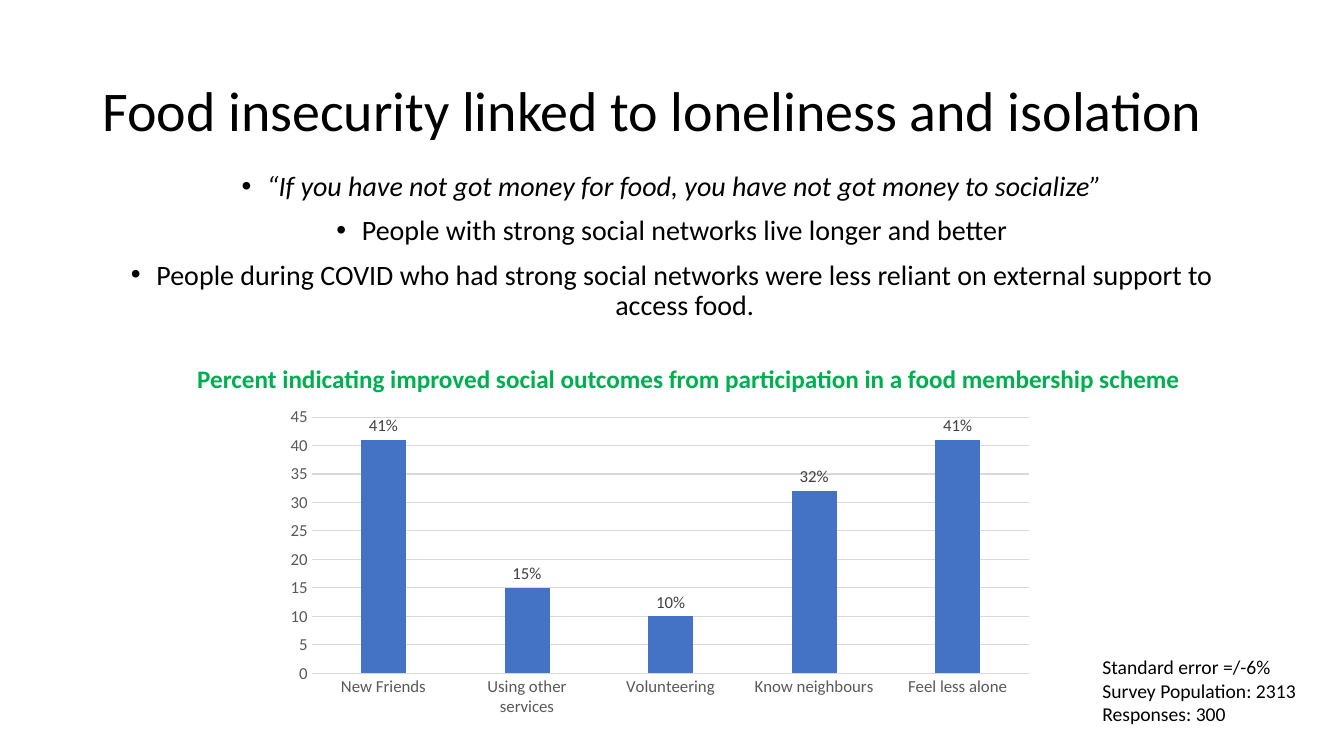
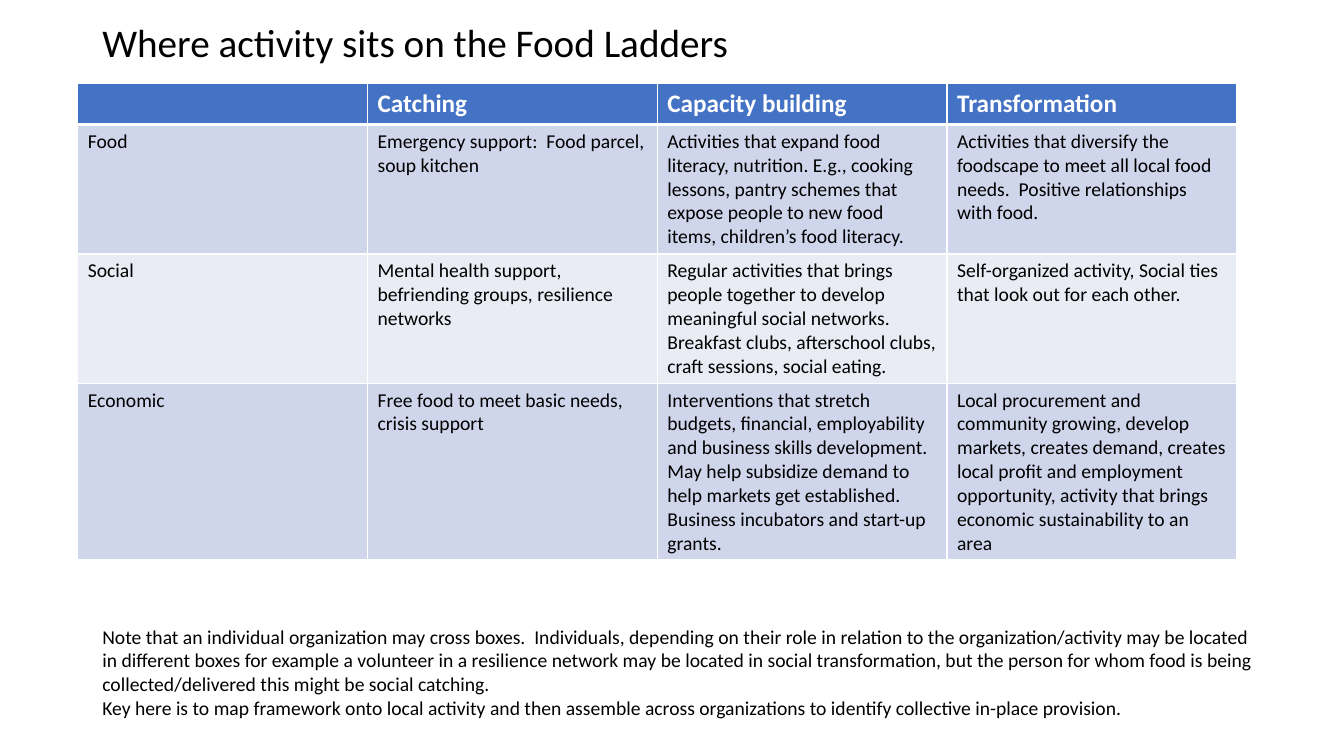
from dataclasses import dataclass

from lxml import etree
from pptx import Presentation
from pptx.chart.data import CategoryChartData
from pptx.dml.color import RGBColor
from pptx.enum.chart import XL_CHART_TYPE, XL_LABEL_POSITION, XL_TICK_MARK
from pptx.enum.text import MSO_ANCHOR, MSO_AUTO_SIZE, PP_ALIGN
from pptx.oxml import parse_xml
from pptx.oxml.ns import nsdecls, qn
from pptx.util import Cm, Pt

COLUMN = XL_CHART_TYPE.COLUMN_CLUSTERED
ABOVE = XL_LABEL_POSITION.OUTSIDE_END
NO_TICK = XL_TICK_MARK.NONE
MIDDLE = MSO_ANCHOR.MIDDLE
CENTER = PP_ALIGN.CENTER
GROW = MSO_AUTO_SIZE.SHAPE_TO_FIT_TEXT


@dataclass(frozen=True)
class Theme:
    font: str = "Calibri"
    ink: str = "000000"
    paper: str = "FFFFFF"
    blue: str = "4472C4"
    green: str = "00B050"
    dark: str = "CFD5EA"
    light: str = "E9EBF5"
    axis: str = "595959"
    label: str = "404040"
    grid: str = "D9D9D9"
    title: int = 40
    small: int = 28
    body: int = 20
    head: int = 18
    note: int = 14
    tick: int = 12
    left: float = 2.33
    width: float = 29.21


T = Theme()

POINTS = [
    "“If you have not got money for food, you have not got money to socialize”",
    "People with strong social networks live longer and better",
    "People during COVID who had strong social networks were less reliant "
    "on external support to access food.",
]
SCORES = {
    "New Friends": 41,
    "Using other services": 15,
    "Volunteering": 10,
    "Know neighbours": 32,
    "Feel less alone": 41,
}
SURVEY = ["Standard error =/-6%", "Survey Population: 2313", "Responses: 300"]
LADDER = [
    ["", "Catching", "Capacity building", "Transformation"],
    ["Food",
     "Emergency support:  Food parcel, soup kitchen",
     "Activities that expand food literacy, nutrition. E.g., cooking lessons, "
     "pantry schemes that expose people to new food items, children’s food "
     "literacy.",
     "Activities that diversify the foodscape to meet all local food needs.  "
     "Positive relationships with food."],
    ["Social",
     "Mental health support, befriending groups, resilience networks",
     "Regular activities that brings people together to develop meaningful "
     "social networks. Breakfast clubs, afterschool clubs, craft sessions, "
     "social eating.",
     "Self-organized activity, Social ties that look out for each other."],
    ["Economic",
     "Free food to meet basic needs, crisis support",
     "Interventions that stretch budgets, financial, employability and "
     "business skills development. May help subsidize demand to help markets "
     "get established.  Business incubators and start-up grants.",
     "Local procurement and community growing, develop markets, creates "
     "demand, creates local profit and employment opportunity, activity that "
     "brings economic sustainability to an area"],
]
HEIGHTS = [1.04, 3.26, 3.26, 4.45]
NOTES = [
    "Note that an individual organization may cross boxes.  Individuals, "
    "depending on their role in relation to the organization/activity may be "
    "located in different boxes for example a volunteer in a resilience "
    "network may be located in social transformation, but the person for whom "
    "food is being collected/delivered this might be social catching.",
    "Key here is to map framework onto local activity and then assemble "
    "across organizations to identify collective in-place provision.",
]


def style(font, size, color=T.ink, bold=False):
    font.name = T.font
    font.size = Pt(size)
    font.bold = bold
    font.color.rgb = RGBColor.from_string(color)


def add_text(slide, box, lines, size, color=T.ink, bold=False, wrap=True):
    frame = slide.shapes.add_textbox(*map(Cm, box)).text_frame
    frame.text = "\n".join(lines)
    frame.word_wrap = wrap
    for para in frame.paragraphs:
        for run in para.runs:
            style(run.font, size, color, bold)
    return frame


def add_title(slide, text, top, height, size):
    frame = add_text(slide, (T.left, top, T.width, height), [text], size)
    frame.vertical_anchor = MIDDLE
    frame.paragraphs[0].line_spacing = 0.9


def add_bullets(slide, box, lines):
    frame = add_text(slide, box, lines, T.body)
    for para in frame.paragraphs:
        para.alignment = CENTER
        para.line_spacing = 0.9
        para.space_before = Pt(10)
        props = para._p.get_or_add_pPr()
        props.set("marL", str(Cm(0.64)))
        props.set("indent", str(Cm(-0.64)))
        etree.SubElement(props, qn("a:buFont")).set("typeface", "Arial")
        etree.SubElement(props, qn("a:buChar")).set("char", "•")
    return frame


def set_line(line):
    line.color.rgb = RGBColor.from_string(T.grid)
    line.width = Pt(0.75)


def set_plot(chart, x, y, w, h):
    """Fix the inner plot area as shares of the chart."""
    area = chart._chartSpace.chart.plotArea
    for old in area.findall(qn("c:layout")):
        area.remove(old)
    area.insert(0, parse_xml(
        f'<c:layout {nsdecls("c")}><c:manualLayout>'
        '<c:layoutTarget val="inner"/>'
        '<c:xMode val="edge"/><c:yMode val="edge"/>'
        f'<c:x val="{x}"/><c:y val="{y}"/><c:w val="{w}"/><c:h val="{h}"/>'
        '</c:manualLayout></c:layout>'))


def add_columns(slide, box, scores):
    data = CategoryChartData()
    data.categories = list(scores)
    data.add_series("Series 1", list(scores.values()))
    chart = slide.shapes.add_chart(COLUMN, *map(Cm, box), data).chart
    chart.has_legend = False
    chart.has_title = False
    style(chart.font, T.tick)
    set_plot(chart, 0.07, 0.03, 0.92, 0.79)

    # Axes
    cats, vals = chart.category_axis, chart.value_axis
    for axis in (cats, vals):
        axis.major_tick_mark = axis.minor_tick_mark = NO_TICK
        style(axis.tick_labels.font, T.tick, T.axis)
    set_line(cats.format.line)
    vals.format.line.fill.background()
    vals.minimum_scale, vals.maximum_scale, vals.major_unit = 0, 45, 5
    set_line(vals.major_gridlines.format.line)

    # Bars and their labels
    plot = chart.plots[0]
    plot.gap_width, plot.overlap = 219, -27
    plot.vary_by_categories = False
    fill = plot.series[0].format.fill
    fill.solid()
    fill.fore_color.rgb = RGBColor.from_string(T.blue)
    labels = plot.series[0].data_labels
    labels.show_value = True
    labels.position = ABOVE
    labels.number_format = '0"%"'
    labels.number_format_is_linked = False
    style(labels.font, T.tick, T.label)


def set_edges(cell, widths):
    props = cell._tc.get_or_add_tcPr()
    for side, width in zip("LRTB", widths):
        props.append(parse_xml(
            f'<a:ln{side} {nsdecls("a")} w="{Pt(width)}"><a:solidFill>'
            f'<a:srgbClr val="{T.paper}"/></a:solidFill></a:ln{side}>'))


def set_cell(cell, text, size, color, fill, bold, widths):
    set_edges(cell, widths)
    cell.fill.solid()
    cell.fill.fore_color.rgb = RGBColor.from_string(fill)
    cell.text = text
    for run in cell.text_frame.paragraphs[0].runs:
        style(run.font, size, color, bold)


def add_grid(slide, left, top, rows, heights):
    size = (T.width, sum(heights))
    table = slide.shapes.add_table(
        len(rows), len(rows[0]), *map(Cm, (left, top, *size))).table
    for r, (texts, height) in enumerate(zip(rows, heights)):
        table.rows[r].height = Cm(height)
        if r == 0:
            look = (T.head, T.paper, T.blue, True, (1, 1, 1, 3))
        else:
            band = T.dark if r % 2 else T.light
            upper = 3 if r == 1 else 1
            look = (T.note, T.ink, band, False, (1, 1, upper, 1))
        for c, text in enumerate(texts):
            set_cell(table.cell(r, c), text, *look)


def show_links(slide):
    add_title(slide, "Food insecurity linked to loneliness and isolation",
              1.02, 3.68, T.title)
    frame = add_bullets(slide, (T.left, 4.22, T.width, 12.09), POINTS)
    frame.paragraphs[0].runs[0].font.italic = True
    add_columns(slide, (6.48, 10.26, 19.66, 8.18), SCORES)
    head = add_text(
        slide, (4.72, 9.02, 25.48, 1.02),
        ["Percent indicating improved social outcomes from participation "
         "in a food membership scheme"],
        T.head, T.green, bold=True, wrap=False)
    side = add_text(slide, (27.53, 16.38, 5.44, 2.06), SURVEY, T.note,
                    wrap=False)
    head.auto_size = side.auto_size = GROW


def show_ladder(slide):
    add_title(slide, "Where activity sits on the Food Ladders",
              0.23, 1.8, T.small)
    add_grid(slide, 1.96, 2.1, LADDER, HEIGHTS)
    notes = add_text(slide, (T.left, 15.62, 29.59, 2.64), NOTES, T.note)
    notes.auto_size = GROW


def main():
    deck = Presentation()
    deck.slide_width, deck.slide_height = Cm(33.87), Cm(19.05)
    for show in (show_links, show_ladder):
        show(deck.slides.add_slide(deck.slide_layouts[6]))
    deck.save("out.pptx")


if __name__ == "__main__":
    main()
